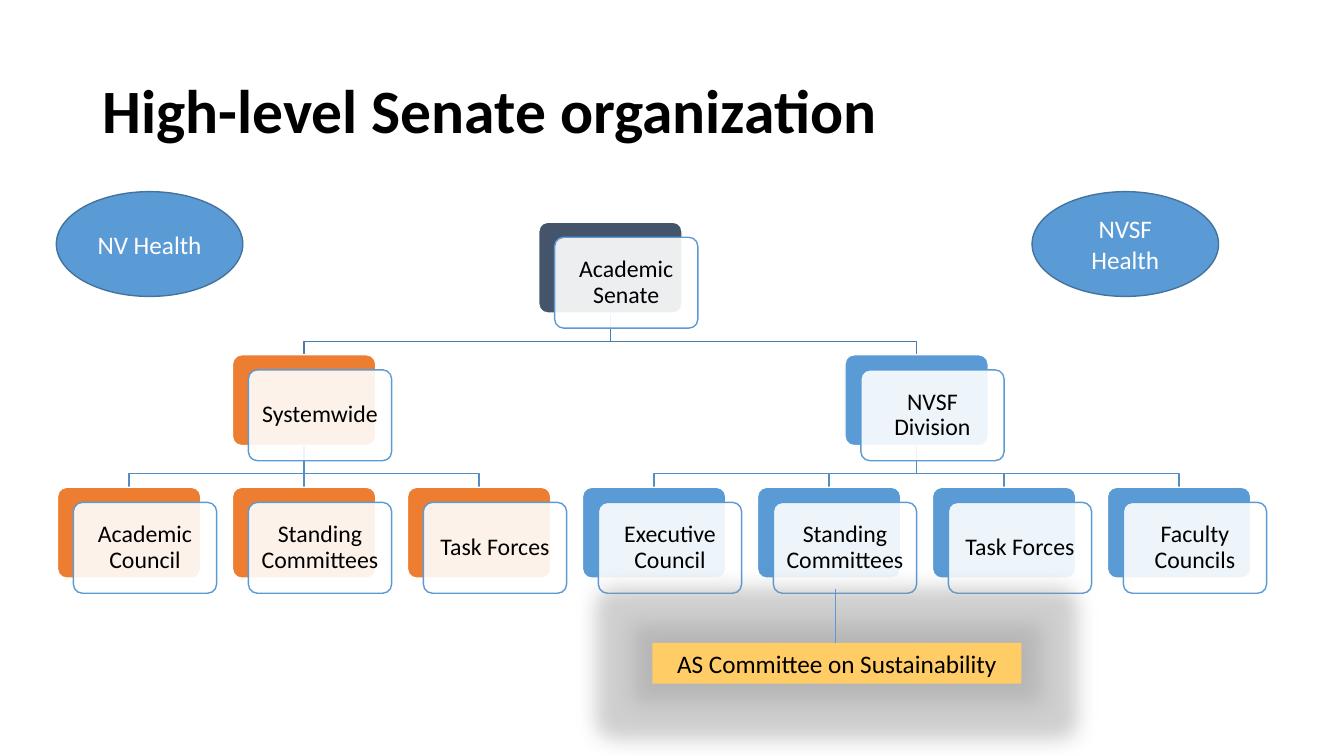
from lxml.etree import SubElement
from pptx import Presentation
from pptx.dml.color import RGBColor
from pptx.enum.shapes import MSO_CONNECTOR, MSO_SHAPE
from pptx.enum.text import MSO_ANCHOR, MSO_AUTO_SIZE, PP_ALIGN
from pptx.oxml.ns import qn
from pptx.util import Cm, Pt

BLACK = RGBColor(0x00, 0x00, 0x00)
WHITE = RGBColor(0xFF, 0xFF, 0xFF)
SLATE = RGBColor(0x44, 0x54, 0x6A)
ORANGE = RGBColor(0xED, 0x7D, 0x31)
BLUE = RGBColor(0x5B, 0x9B, 0xD5)
EDGE = RGBColor(0x43, 0x73, 0x9E)
TOP_LINK = RGBColor(0x49, 0x7C, 0xAB)
LOW_LINK = RGBColor(0x53, 0x8D, 0xC1)
YELLOW = RGBColor(0xFF, 0xCC, 0x66)


def write(shape, text, size=18, color=BLACK, bold=False, align=PP_ALIGN.CENTER,
          spacing=1.0, inset=0.25):
    frame = shape.text_frame
    frame.word_wrap = True
    frame.auto_size = MSO_AUTO_SIZE.NONE
    frame.vertical_anchor = MSO_ANCHOR.MIDDLE
    frame.margin_left = frame.margin_right = Cm(inset)
    frame.margin_top = frame.margin_bottom = Cm(min(inset, 0.18))
    line = frame.paragraphs[0]
    line.alignment = align
    line.line_spacing = spacing
    run = line.add_run()
    run.text = text
    run.font.name = "Calibri"
    run.font.size = Pt(size)
    run.font.bold = bold
    run.font.color.rgb = color


def draw(kind, left, top, width, height, fill, edge=None):
    shape = slide.shapes.add_shape(kind, Cm(left), Cm(top), Cm(width), Cm(height))
    shape.shadow.inherit = False
    shape.fill.solid()
    shape.fill.fore_color.rgb = fill
    if edge is None:
        shape.line.fill.background()
    else:
        shape.line.color.rgb = edge
        shape.line.width = Pt(1)
    if kind == MSO_SHAPE.ROUNDED_RECTANGLE:
        shape.adjustments[0] = 0.1
    return shape


deck = Presentation()
deck.slide_width, deck.slide_height = Cm(33.87), Cm(19.05)
slide = deck.slides.add_slide(deck.slide_layouts[5])

# Title
title = slide.shapes.title
title.left, title.top, title.width, title.height = Cm(2.33), Cm(1.01), Cm(29.21), Cm(3.68)
write(title, "High-level Senate organization", size=44, bold=True,
      align=PP_ALIGN.LEFT, spacing=0.9)

# Chart grid: column and level of each unit, with the index of its parent
WIDE, HIGH = 3.61, 2.29
LEFT, TOP = 1.45, 5.6
STEP, DROP = 4.41, 3.34
units = [
    ("Academic Senate", 2.75, 0, SLATE, None),
    ("Systemwide", 1, 1, ORANGE, 0),
    ("Academic Council", 0, 2, ORANGE, 1),
    ("Standing Committees", 1, 2, ORANGE, 1),
    ("Task Forces", 2, 2, ORANGE, 1),
    ("NVSF Division", 4.5, 1, BLUE, 0),
    ("Executive Council", 3, 2, BLUE, 5),
    ("Standing Committees", 4, 2, BLUE, 5),
    ("Task Forces", 5, 2, BLUE, 5),
    ("Faculty Councils", 6, 2, BLUE, 5),
]

# Links from parent to child
for name, col, level, color, boss in units:
    if boss is None:
        continue
    start = Cm(LEFT + STEP * units[boss][1] + WIDE / 2)
    end = Cm(LEFT + STEP * col + WIDE / 2)
    low = TOP + DROP * level
    high = low - DROP + HIGH
    bend = Cm(high + 0.71)
    points = [(end, Cm(low))]
    if start != end:
        points = [(start, bend), (end, bend)] + points
    pen = slide.shapes.build_freeform(start, Cm(high))
    pen.add_line_segments(points, close=False)
    link = pen.convert_to_shape()
    link.shadow.inherit = False
    link.fill.background()
    link.line.color.rgb = TOP_LINK if level == 1 else LOW_LINK
    link.line.width = Pt(1)

# Units: a coloured back card and a nearly opaque front card
for name, col, level, color, boss in units:
    left, top = LEFT + STEP * col, TOP + DROP * level
    draw(MSO_SHAPE.ROUNDED_RECTANGLE, left, top, WIDE, HIGH, color, WHITE)
    front = draw(MSO_SHAPE.ROUNDED_RECTANGLE, left + 0.4, top + 0.38, WIDE, HIGH, WHITE, BLUE)
    tint = front.fill._xPr.find(qn("a:solidFill"))[0]
    SubElement(tint, qn("a:alpha"), val="90000")
    write(front, name, size=17, spacing=0.9, inset=0.18)

# Sustainability committee with grey glow and soft shadow
box = draw(MSO_SHAPE.RECTANGLE, 16.44, 16.2, 9.3, 1.03, YELLOW)
write(box, "AS Committee on Sustainability")
effects = box._element.spPr.find(qn("a:effectLst"))
glow = SubElement(effects, qn("a:glow"), rad=str(Cm(0.95)))
shade = SubElement(effects, qn("a:outerShdw"), blurRad=str(Cm(0.5)), dist="0", algn="ctr")
for effect, tone, alpha in ((glow, "A5A5A5", "40000"), (shade, "000000", "20000")):
    ink = SubElement(effect, qn("a:srgbClr"), val=tone)
    SubElement(ink, qn("a:alpha"), val=alpha)

stem = slide.shapes.add_connector(MSO_CONNECTOR.STRAIGHT, Cm(21.06), Cm(14.83), Cm(21.06), Cm(16.2))
stem.line.color.rgb = BLUE
stem.line.width = Pt(0.5)
SubElement(stem._element.spPr, qn("a:effectLst"))

# Health systems
for name, left in (("NV Health", 1.42), ("NVSF Health", 26.01)):
    oval = draw(MSO_SHAPE.OVAL, left, 4.83, 4.7, 2.64, BLUE, EDGE)
    write(oval, name, color=WHITE)

deck.save("out.pptx")
